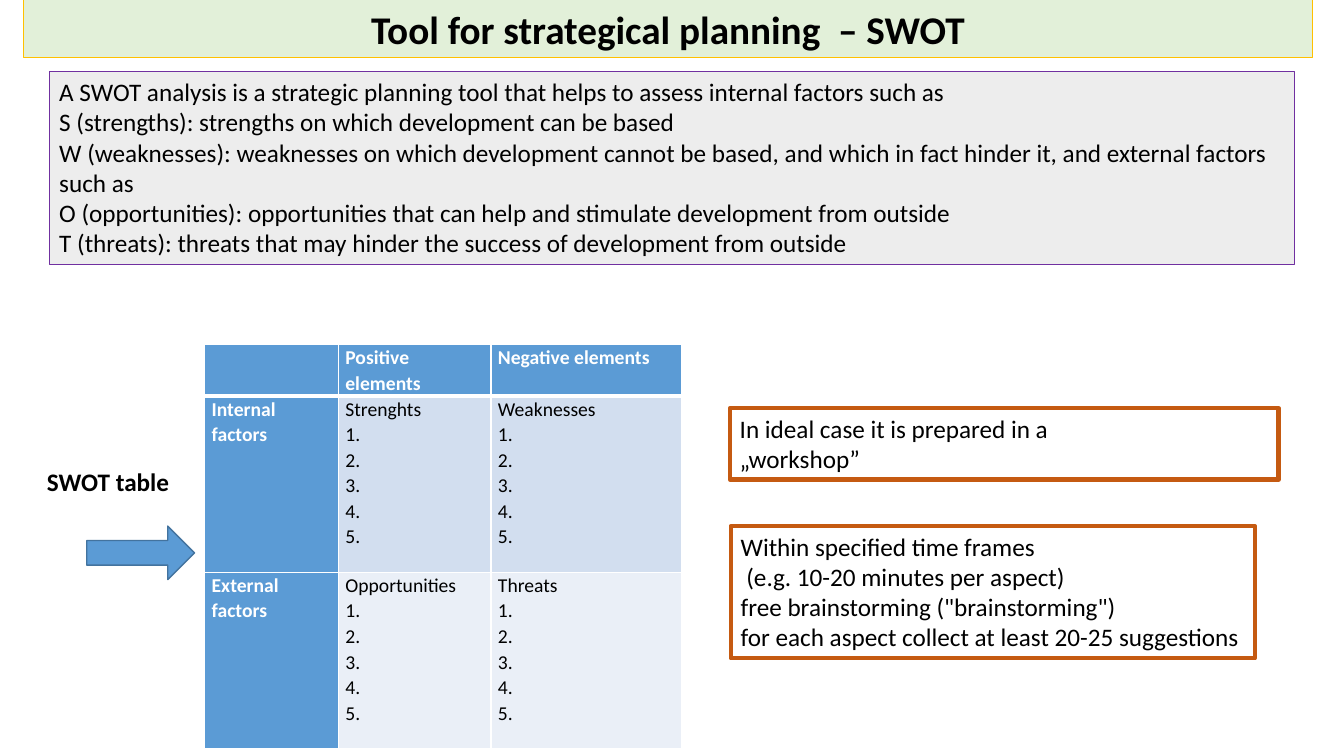
from lxml.etree import SubElement
from pptx import Presentation
from pptx.dml.color import RGBColor
from pptx.enum.shapes import MSO_SHAPE
from pptx.enum.text import MSO_ANCHOR, PP_ALIGN
from pptx.oxml.ns import qn
from pptx.util import Pt

FONT = "Calibri"
HUES = {
    "black": "000000", "white": "FFFFFF", "green": "E2F0D9", "gold": "FFC000",
    "gray": "EDEDED", "purple": "7030A0", "blue": "5B9BD5", "navy": "43739E",
    "mid": "D2DEEF", "pale": "EAEFF7", "rust": "C55A11",
}

TITLE = ["Tool for strategical planning  – SWOT"]
INTRO = [
    "A SWOT analysis is a strategic planning tool that helps to assess internal factors such as",
    "S (strengths): strengths on which development can be based",
    "W (weaknesses): weaknesses on which development cannot be based, "
    "and which in fact hinder it, and external factors such as",
    "O (opportunities): opportunities that can help and stimulate development from outside",
    "T (threats): threats that may hinder the success of development from outside",
]
SHOP = ["In ideal case it is prepared in a", "„workshop”"]
TIME = [
    "Within specified time frames",
    " (e.g. 10-20 minutes per aspect)",
    "free brainstorming (\"brainstorming\")",
    "for each aspect collect at least 20-25 suggestions",
]
GRID = [
    ["", "Positive elements", "Negative elements"],
    ["Internal factors", "Strenghts", "Weaknesses"],
    ["External factors", "Opportunities", "Threats"],
]
ITEMS = [f"{n}." for n in range(1, 6)]
COLS = [95.5, 109, 136.3]
ROWS = [35.6, 126, 126]


def color(name):
    return RGBColor.from_string(HUES[name])


def write(frame, lines, size=18, bold=False, hue="black", align=None, lead=None):
    frame.word_wrap = True
    frame.text = "\n".join(lines)
    for para in frame.paragraphs:
        para.font.name = FONT
        para.font.size = Pt(size)
        para.font.bold = bold
        para.font.color.rgb = color(hue)
        para.alignment = align
        para.line_spacing = lead


def panel(slide, box, edge, width, fill=None, kind=MSO_SHAPE.RECTANGLE):
    shape = slide.shapes.add_shape(kind, *map(Pt, box))
    shape.shadow.inherit = False
    if fill:
        shape.fill.solid()
        shape.fill.fore_color.rgb = color(fill)
    else:
        shape.fill.background()
    shape.line.color.rgb = color(edge)
    shape.line.width = Pt(width)
    return shape


def note(slide, box, lines, edge, width, fill=None, size=18, bold=False,
         align=PP_ALIGN.LEFT, wrap=True):
    frame = panel(slide, box, edge, width, fill).text_frame
    frame.vertical_anchor = MSO_ANCHOR.TOP
    write(frame, lines, size, bold, align=align)
    frame.word_wrap = wrap


def rule(cell, row):
    # White cell borders, thicker under the header row
    props = cell._tc.get_or_add_tcPr()
    wide = {0: "lnB", 1: "lnT"}.get(row)
    for side in ("lnL", "lnR", "lnT", "lnB"):
        line = SubElement(props, qn(f"a:{side}"), w=str(Pt(3 if side == wide else 1)))
        fill = SubElement(line, qn("a:solidFill"))
        SubElement(fill, qn("a:srgbClr"), val=HUES["white"])


def matrix(slide, left, top):
    frame = slide.shapes.add_table(len(ROWS), len(COLS), Pt(left), Pt(top),
                                   Pt(sum(COLS)), Pt(sum(ROWS)))
    table = frame.table
    table.first_col = True
    for col, width in zip(table.columns, COLS):
        col.width = Pt(width)
    for r, (names, high) in enumerate(zip(GRID, ROWS)):
        table.rows[r].height = Pt(high)
        for c, name in enumerate(names):
            cell = table.cell(r, c)
            head = r == 0 or c == 0
            rule(cell, r)
            cell.fill.solid()
            cell.fill.fore_color.rgb = color("blue" if head else ("mid", "pale")[r - 1])
            cell.margin_left = cell.margin_right = Pt(5)
            cell.margin_top = cell.margin_bottom = 0
            write(cell.text_frame, [name] if head else [name] + ITEMS, 14, head,
                  "white" if head else "black", lead=1.07)


def label(slide, left, top):
    # Caption with the arrow that points to the table
    text = slide.shapes.add_textbox(Pt(left), Pt(top), Pt(136), Pt(31)).text_frame
    write(text, ["SWOT table"], bold=True, align=PP_ALIGN.CENTER, lead=1.07)
    text.paragraphs[0].space_after = Pt(8)
    arrow = panel(slide, (left + 52.8, top + 47.5, 77, 38.2), "navy", 1, "blue",
                  MSO_SHAPE.RIGHT_ARROW)
    arrow.adjustments[0] = 0.46


def swot(slide):
    # Title and definition
    note(slide, (16.5, 0, 921, 41), TITLE, "gold", 0.75, "green", 28, True,
         PP_ALIGN.CENTER)
    note(slide, (35.2, 51, 889.2, 138.2), INTRO, "purple", 0.75, "gray")
    # Table with its label
    matrix(slide, 146.2, 246.2)
    label(slide, 9.2, 328.3)
    # Advice on the right
    note(slide, (521.3, 291.6, 392, 51), SHOP, "rust", 3)
    note(slide, (522, 375.8, 374.4, 94.5), TIME, "rust", 3, wrap=False)


def main():
    deck = Presentation()
    deck.slide_width, deck.slide_height = Pt(960), Pt(540)
    swot(deck.slides.add_slide(deck.slide_layouts[6]))
    deck.save("out.pptx")


if __name__ == "__main__":
    main()
